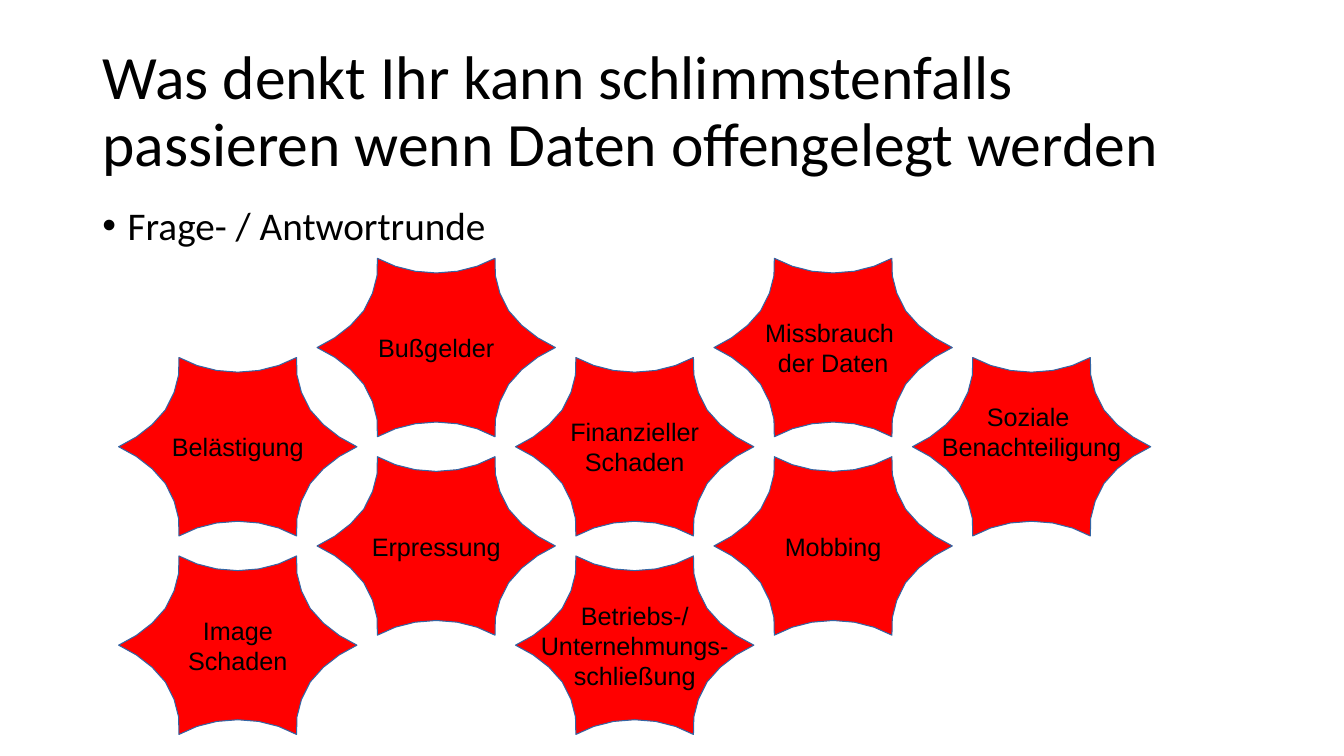
from pptx import Presentation
from pptx import util as u
from pptx.dml.color import RGBColor
from pptx.enum import text

PX = 9525
RED = RGBColor(0xFF, 0x00, 0x00)
BLUE = RGBColor(0x34, 0x65, 0xA4)
BLACK = RGBColor(0x00, 0x00, 0x00)

STAR_WIDTH, STAR_HEIGHT = 227, 170
GRID_LEFT, GRID_TOP, PITCH = 113, 246, 189
CURVE_STEPS = 3
QUARTER_CURVES = [
    [(113.5, 0), (96, -8), (80, -20), (69, -35)],
    [(69, -35), (58.5, -52), (54.5, -68), (56, -85)],
    [(56, -85), (40, -76), (20.5, -71), (0, -71)],
]

RISKS = [
    (0, 1, ["Belästigung"]),
    (1, 2, ["Erpressung"]),
    (0, 3, ["Image", "Schaden"]),
    (2, 1, ["Finanzieller", "Schaden"]),
    (2, 3, ["Betriebs-/", "Unternehmungs-", "schließung"]),
    (3, 0, ["Missbrauch ", "der Daten"]),
    (1, 0, ["Bußgelder"]),
    (4, 1, ["Soziale ", "Benachteiligung"]),
    (3, 2, ["Mobbing"]),
]
LIFTED_LABEL = (4, 1)


def px(value):
    return u.Emu(round(value * PX))


def set_font(paragraph, name, size):
    paragraph.font.name = name
    paragraph.font.size = u.Pt(size)
    paragraph.font.color.rgb = BLACK


def fill_placeholder(placeholder, box, content, size, anchor):
    placeholder.left, placeholder.top, placeholder.width, placeholder.height = map(px, box)
    frame = placeholder.text_frame
    frame.text = content
    frame.auto_size = text.MSO_AUTO_SIZE.NONE
    frame.vertical_anchor = anchor
    paragraph = frame.paragraphs[0]
    paragraph.alignment = text.PP_ALIGN.LEFT
    paragraph.line_spacing = 0.9
    set_font(paragraph, "Calibri", size)
    return paragraph


def curve_point(curve, t):
    weights = ((1 - t) ** 3, 3 * t * (1 - t) ** 2, 3 * t * t * (1 - t), t ** 3)
    return tuple(sum(w * point[axis] for w, point in zip(weights, curve)) for axis in (0, 1))


def star_outline():
    quarter = [curve_point(curve, step / CURVE_STEPS)
               for curve in QUARTER_CURVES for step in range(CURVE_STEPS)]
    quarter.append(QUARTER_CURVES[-1][-1])
    upper = quarter + [(-x, y) for x, y in reversed(quarter[:-1])]
    return upper + [(x, -y) for x, y in reversed(upper[1:-1])]


def add_star(slide, column, row, lines, outline):
    center_x = GRID_LEFT + column * PITCH + STAR_WIDTH / 2
    center_y = GRID_TOP + row * PITCH / 2 + STAR_HEIGHT / 2
    points = [(px(center_x + x), px(center_y + y)) for x, y in outline]
    builder = slide.shapes.build_freeform(*points[0])
    builder.add_line_segments(points[1:], close=True)
    shape = builder.convert_to_shape()
    shape.shadow.inherit = False
    shape.fill.solid()
    shape.fill.fore_color.rgb = RED
    shape.line.color.rgb = BLUE
    shape.line.width = 0
    frame = shape.text_frame
    frame.word_wrap = False
    frame.vertical_anchor = text.MSO_ANCHOR.MIDDLE
    frame.text = "\n".join(lines)
    if (column, row) == LIFTED_LABEL:
        frame.margin_bottom = px(34)
    for paragraph in frame.paragraphs:
        paragraph.alignment = text.PP_ALIGN.CENTER
        set_font(paragraph, "Arial", 18)


def main():
    presentation = Presentation()
    presentation.slide_width, presentation.slide_height = px(1280), px(720)
    slide = presentation.slides.add_slide(presentation.slide_layouts[1])
    title, body = slide.placeholders
    fill_placeholder(title, (88, 38, 1104, 139),
                     "Was denkt Ihr kann schlimmstenfalls passieren wenn Daten offengelegt werden",
                     44, text.MSO_ANCHOR.MIDDLE)
    bullet = fill_placeholder(body, (88, 192, 1104, 243), "Frage- / Antwortrunde",
                              28, text.MSO_ANCHOR.TOP)
    bullet.space_before = u.Pt(10)
    properties = bullet._p.get_or_add_pPr()
    properties.set("marL", str(px(24)))
    properties.set("indent", str(px(-24)))
    outline = star_outline()
    for column, row, lines in RISKS:
        add_star(slide, column, row, lines, outline)
    presentation.save("out.pptx")


if __name__ == "__main__":
    main()
